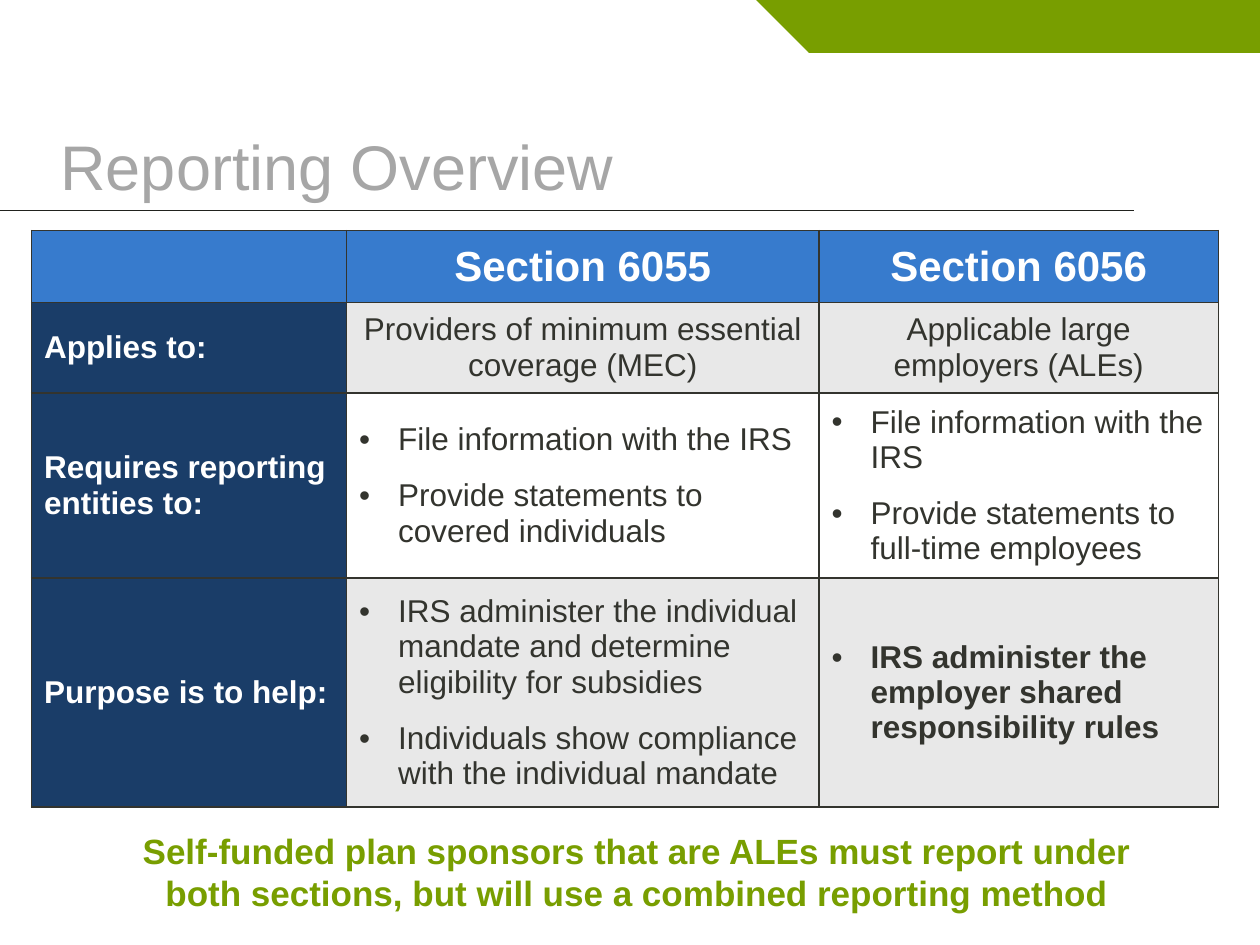
from lxml.etree import SubElement
from pptx import Presentation
from pptx.dml.color import RGBColor
from pptx.enum.shapes import MSO_CONNECTOR, MSO_SHAPE
from pptx.enum.text import MSO_ANCHOR, MSO_AUTO_SIZE, PP_ALIGN
from pptx.oxml.ns import qn
from pptx.util import Inches, Pt

COLORS = {
    "green": "789E00", "title": "A6A6A6", "rule": "21221E", "ink": "33342E",
    "blue": "377BCD", "navy": "1A3D68", "grey": "E8E8E8", "white": "FFFFFF",
}
HEADERS = ["", "Section 6055", "Section 6056"]
ROWS = [
    ("Applies to:", "grey", False,
     [["Providers of minimum essential coverage (MEC)"],
      ["Applicable large employers (ALEs)"]]),
    ("Requires reporting entities to:", "white", True,
     [["File information with the IRS",
       "Provide statements to covered individuals"],
      ["File information with the IRS",
       "Provide statements to full-time employees"]]),
    ("Purpose is to help:", "grey", True,
     [["IRS administer the individual mandate and determine eligibility for subsidies",
       "Individuals show compliance with the individual mandate"],
      ["IRS administer the employer shared responsibility rules"]]),
]
BOLD_ITEMS = {"IRS administer the employer shared responsibility rules"}
COL_WIDTHS = [2.5, 3.75, 3.17]
ROW_HEIGHTS = [0.57, 0.72, 1.38, 1.82]


def rgb(name):
    return RGBColor.from_string(COLORS[name])


def add_run(p, text, size, color, bold=False):
    r = p.add_run()
    r.text = text
    r.font.name = "Arial"
    r.font.size = Pt(size)
    r.font.bold = bold
    r.font.color.rgb = rgb(color)


def set_indent(p, left, first=0):
    pPr = p._p.get_or_add_pPr()
    pPr.set("marL", str(Inches(left)))
    pPr.set("indent", str(Inches(first)))
    return pPr


def add_bullet(p):
    pPr = set_indent(p, 0.31, -0.31)
    SubElement(pPr, qn("a:buFont"), typeface="Arial")
    SubElement(pPr, qn("a:buChar"), char="•")


def add_banner(s, x, y, w, h):
    parts = [(MSO_SHAPE.RECTANGLE, x + h, w - h, 0),
             (MSO_SHAPE.RIGHT_TRIANGLE, x, h, 180)]
    for kind, left, width, angle in parts:
        sp = s.shapes.add_shape(kind, Inches(left), Inches(y), Inches(width), Inches(h))
        sp.rotation = angle
        sp.shadow.inherit = False
        sp.fill.solid()
        sp.fill.fore_color.rgb = rgb("green")
        sp.line.fill.background()


def add_title(s, x, y, w, h):
    sp = s.shapes.title
    sp.left, sp.top, sp.width, sp.height = map(Inches, (x, y, w, h))
    tf = sp.text_frame
    tf.vertical_anchor = MSO_ANCHOR.BOTTOM
    tf.auto_size = MSO_AUTO_SIZE.NONE
    p = tf.paragraphs[0]
    p.alignment = PP_ALIGN.LEFT
    set_indent(p, 0.38)
    add_run(p, "Reporting Overview", 36, "title")


def add_rule(s, x, y, w):
    line = s.shapes.add_connector(
        MSO_CONNECTOR.STRAIGHT, Inches(x), Inches(y), Inches(x + w), Inches(y))
    line.line.color.rgb = rgb("rule")
    line.line.width = Pt(0.25)
    SubElement(line._element.spPr, qn("a:effectLst"))


def set_borders(cell):
    tcPr = cell._tc.get_or_add_tcPr()
    for i, side in enumerate(("lnL", "lnR", "lnT", "lnB")):
        ln = tcPr.makeelement(qn(f"a:{side}"), {"w": str(Pt(1))})
        tcPr.insert(i, ln)
        fill = SubElement(ln, qn("a:solidFill"))
        SubElement(fill, qn("a:srgbClr"), val=COLORS["ink"])


def fill_cell(cell, items, fill, size, color, bold=False, align=PP_ALIGN.LEFT, bullets=False):
    cell.fill.solid()
    cell.fill.fore_color.rgb = rgb(fill)
    cell.vertical_anchor = MSO_ANCHOR.MIDDLE
    set_borders(cell)
    tf = cell.text_frame
    for i, text in enumerate(items):
        p = tf.add_paragraph() if i else tf.paragraphs[0]
        p.alignment = align
        p.space_before = p.space_after = Pt(6)
        if bullets:
            add_bullet(p)
        if text:
            add_run(p, text, size, color, bold or text in BOLD_ITEMS)


def add_comparison(s, x, y, w, h):
    table = s.shapes.add_table(
        len(ROW_HEIGHTS), len(COL_WIDTHS), Inches(x), Inches(y), Inches(w), Inches(h)).table
    table.horz_banding = False
    for col, width in zip(table.columns, COL_WIDTHS):
        col.width = Inches(width)
    for row, height in zip(table.rows, ROW_HEIGHTS):
        row.height = Inches(height)
    for c, text in enumerate(HEADERS):
        fill_cell(table.cell(0, c), [text], "blue", 24, "white", True, PP_ALIGN.CENTER)
    for r, (label, fill, bullets, columns) in enumerate(ROWS, 1):
        fill_cell(table.cell(r, 0), [label], "navy", 18, "white", True)
        align = PP_ALIGN.LEFT if bullets else PP_ALIGN.CENTER
        for c, items in enumerate(columns, 1):
            fill_cell(table.cell(r, c), items, fill, 18, "ink", align=align, bullets=bullets)


def add_takeaway(s, x, y, w, h):
    tf = s.shapes.add_textbox(Inches(x), Inches(y), Inches(w), Inches(h)).text_frame
    tf.word_wrap = True
    tf.vertical_anchor = MSO_ANCHOR.MIDDLE
    p = tf.paragraphs[0]
    p.alignment = PP_ALIGN.CENTER
    add_run(p, "Self-funded plan sponsors that are ALEs must report under both sections, "
               "but will use a combined reporting method", 20, "green", True)


def main():
    prs = Presentation()
    prs.slide_width, prs.slide_height = Inches(10), Inches(7.5)
    s = prs.slides.add_slide(prs.slide_layouts[5])
    add_rule(s, 0, 1.67, 9)
    add_banner(s, 6, 0, 4, 0.42)
    add_title(s, 0, 0.45, 9.5, 1.21)
    add_takeaway(s, 0.75, 6.42, 8.61, 1)
    add_comparison(s, 0.25, 1.83, sum(COL_WIDTHS), sum(ROW_HEIGHTS))
    prs.save("out.pptx")


if __name__ == "__main__":
    main()
